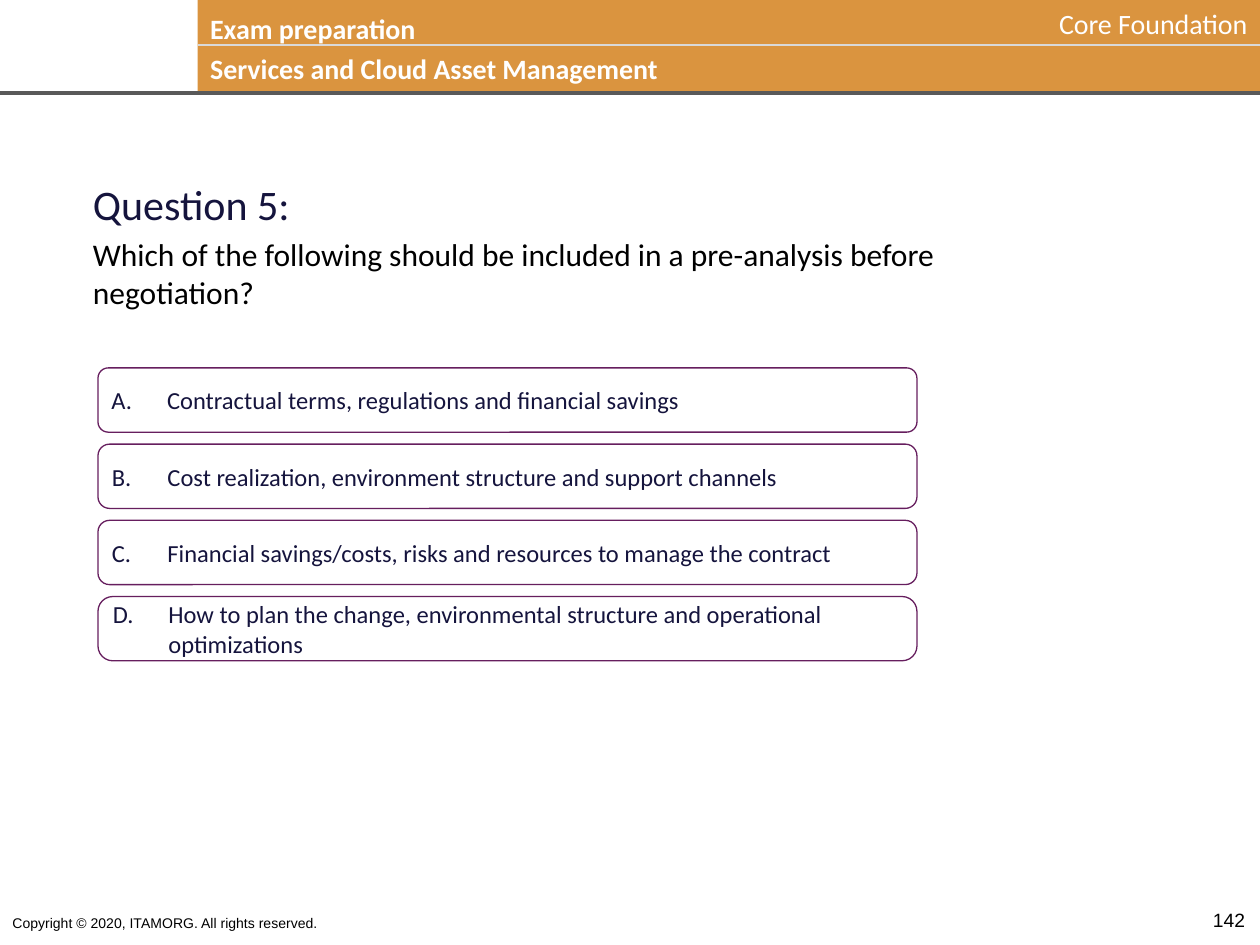
from lxml import etree
from pptx import Presentation
from pptx.dml.color import RGBColor
from pptx.enum.shapes import MSO_CONNECTOR as Connector, MSO_SHAPE as Shape
from pptx.enum.text import MSO_ANCHOR as Anchor, PP_ALIGN as Align
from pptx.oxml.ns import qn
from pptx.util import Pt

BLACK = RGBColor(0x00, 0x00, 0x00)
WHITE = RGBColor(0xFF, 0xFF, 0xFF)
NAVY = RGBColor(0x15, 0x14, 0x3D)
ORANGE = RGBColor(0xDA, 0x94, 0x3F)
PURPLE = RGBColor(0x66, 0x1E, 0x5E)
DARK_GRAY = RGBColor(0x59, 0x59, 0x59)
LIGHT_GRAY = RGBColor(0xD9, 0xD9, 0xD9)


def write(para, text, size=16, color=WHITE, font="Calibri", bold=False, align=Align.LEFT):
    para.alignment = align
    span = para.add_run()
    span.text = text
    span.font.name = font
    span.font.size = Pt(size)
    span.font.bold = bold
    span.font.color.rgb = color


def add_text_box(left, top, width, height):
    """Add a wrapping text box and return its text frame."""
    box = page.shapes.add_textbox(Pt(left), Pt(top), Pt(width), Pt(height))
    box.text_frame.word_wrap = True
    return box.text_frame


deck = Presentation()
deck.slide_width, deck.slide_height = Pt(720), Pt(540)
page = deck.slides.add_slide(deck.slide_layouts[6])

# Footer
copyright_text = add_text_box(0, 519, 342, 17)
write(copyright_text.paragraphs[0], "Copyright © 2020, ITAMORG. All rights reserved.",
      size=8, color=BLACK, font="Arial")
page_number = add_text_box(681, 515.5, 42.5, 24.5)
write(page_number.paragraphs[0], "142", size=11, color=BLACK, font="Arial", align=Align.CENTER)

# Header band and rules
band = page.shapes.add_shape(Shape.RECTANGLE, Pt(113), Pt(-0.5), Pt(607.5), Pt(53.5))
band.shadow.inherit = False
band.fill.solid()
band.fill.fore_color.rgb = ORANGE
band.line.fill.background()

for left, top, right, color, weight in [
    (0, 53, 720, DARK_GRAY, 2.25),
    (113, 25.75, 720.5, LIGHT_GRAY, 0.75),
]:
    rule = page.shapes.add_connector(Connector.STRAIGHT, Pt(left), Pt(top), Pt(right), Pt(top))
    rule.line.color.rgb = color
    rule.line.width = Pt(weight)
    etree.SubElement(rule._element.spPr, qn("a:effectLst"))

course = add_text_box(548, 0, 172, 26.5)
write(course.paragraphs[0], "Core Foundation", align=Align.RIGHT)
for top, heading in [(3, "Exam preparation"), (25.75, "Services and Cloud Asset Management")]:
    title = add_text_box(113, top, 497, 21)
    write(title.paragraphs[0], heading, bold=True)

# Answers
ANSWER_TOP, ANSWER_PITCH = 210.25, 43.55
answers = [
    ("A.\tContractual terms, regulations and financial savings", 0.16),
    ("B.\tCost realization, environment structure and support channels", 0.18),
    ("C.\tFinancial savings/costs, risks and resources to manage the contract", 0.18),
    ("D.\tHow to plan the change, environmental structure and operational optimizations", 0.23),
]
for index, (answer, rounding) in enumerate(answers):
    card = page.shapes.add_shape(Shape.ROUNDED_RECTANGLE, Pt(56), Pt(ANSWER_TOP + index * ANSWER_PITCH),
                                 Pt(468), Pt(36.75))
    card.adjustments[0] = rounding
    card.shadow.inherit = False
    card.fill.background()
    card.line.color.rgb = PURPLE
    card.line.width = Pt(0.75)
    frame = card.text_frame
    frame.word_wrap = True
    frame.vertical_anchor = Anchor.MIDDLE
    frame.margin_left = frame.margin_right = Pt(6)
    frame.margin_top = frame.margin_bottom = Pt(3)
    para = frame.paragraphs[0]
    properties = para._p.get_or_add_pPr()
    properties.set("marL", str(Pt(31.75)))
    properties.set("indent", str(Pt(-31.75)))
    write(para, answer, size=14, color=NAVY)

# Question
question = add_text_box(46, 98.5, 544, 83)
write(question.paragraphs[0], "Question 5:", size=24, color=NAVY)
para = question.add_paragraph()
para.space_before = Pt(3.4)
write(para, "Which of the following should be included in a pre-analysis before negotiation?",
      size=18, color=BLACK)

deck.save("out.pptx")
